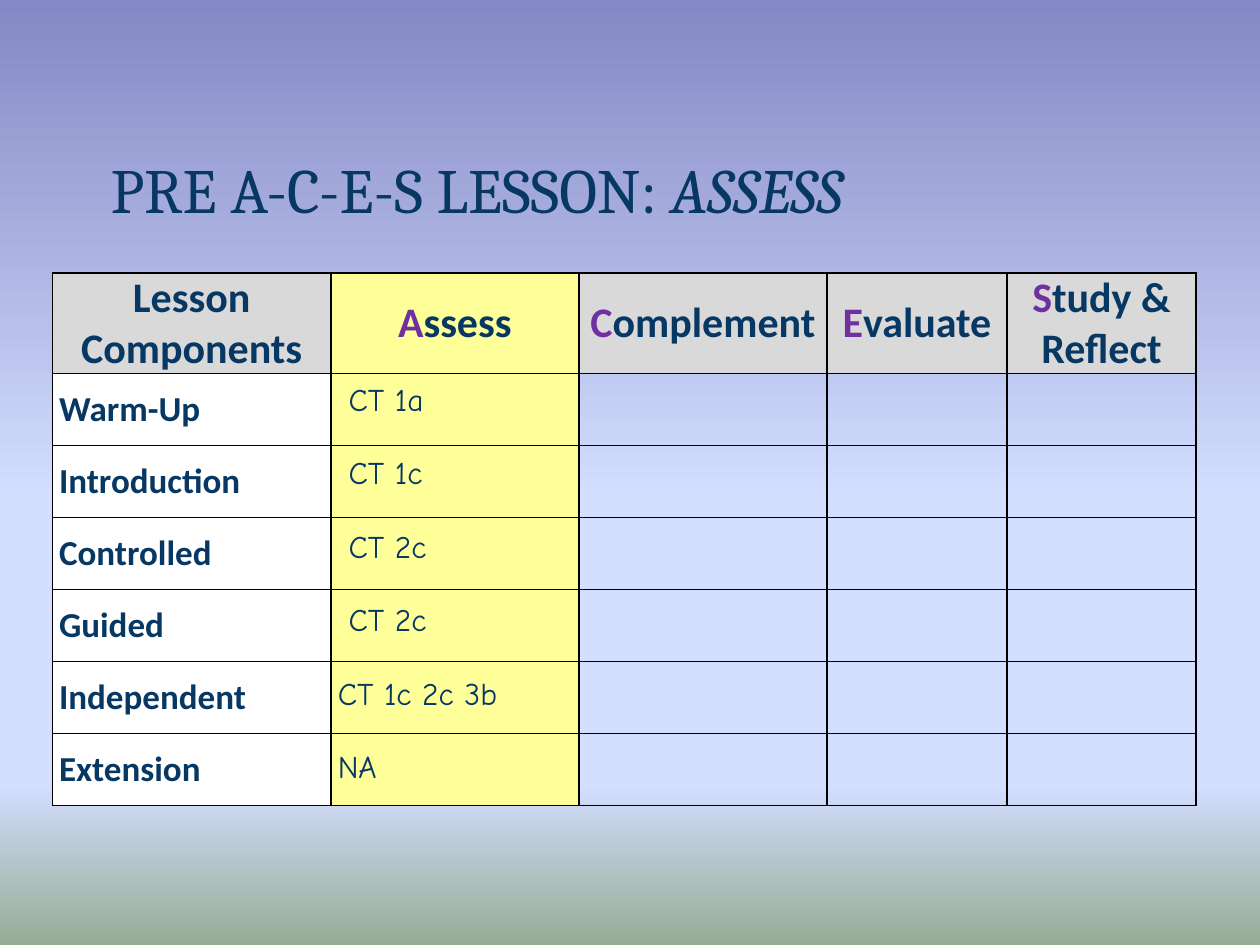
import pptx
import pptx.dml.color
import pptx.enum.text
import pptx.oxml
import pptx.oxml.ns
import pptx.util
from pptx.util import Cm

RGBColor = pptx.dml.color.RGBColor
NAVY = RGBColor(0x07, 0x37, 0x63)
PURPLE = RGBColor(0x70, 0x30, 0xA0)
GRAY = RGBColor(0xD9, 0xD9, 0xD9)
YELLOW = RGBColor(0xFF, 0xFF, 0x99)
WHITE = RGBColor(0xFF, 0xFF, 0xFF)
BLACK = RGBColor(0x00, 0x00, 0x00)
SKY_STOPS = [
    (0, RGBColor(0x84, 0x88, 0xC4)),
    (53, RGBColor(0xD4, 0xDE, 0xFF)),
    (83, RGBColor(0xD4, 0xDE, 0xFF)),
    (100, RGBColor(0x96, 0xAB, 0x94)),
]

MIDDLE = pptx.enum.text.MSO_ANCHOR.MIDDLE
CENTER = pptx.enum.text.PP_ALIGN.CENTER
NAMESPACE = pptx.oxml.ns.nsdecls("a")

COLUMN_WIDTHS = [5.61, 5, 5, 3.63, 3.81]
HEADER_HEIGHT, ROW_HEIGHT = 1.85, 1.45
# Each heading is split into its highlighted initial and the rest
HEADINGS = [("", "Lesson Components"), ("A", "ssess"), ("C", "omplement"),
            ("E", "valuate"), ("S", "tudy & Reflect")]
COMPONENTS = ["Warm-Up", "Introduction", "Controlled", "Guided", "Independent", "Extension"]
# Code and whether it is indented
ASSESS_CODES = [("CT 1a", True), ("CT 1c", True), ("CT 2c", True),
                ("CT 2c", True), ("CT 1c 2c 3b", False), ("NA", False)]


def add_run(paragraph, text, font, size, color=NAVY, bold=False, italic=False):
    run = paragraph.add_run()
    run.text = text
    run.font.name = font
    run.font.size = pptx.util.Pt(size)
    run.font.color.rgb = color
    run.font.bold = bold
    run.font.italic = italic


def paint_background(slide):
    fill = slide.background.fill
    fill.gradient()
    fill.gradient_angle = 270
    stop_list = fill.gradient_stops[0]._gs.getparent()
    for stop in list(stop_list):
        stop_list.remove(stop)
    for position, color in SKY_STOPS:
        stop_list.append(pptx.oxml.parse_xml(
            f'<a:gs {NAMESPACE} pos="{position * 1000}"><a:srgbClr val="{color}"/></a:gs>'))


def add_title(slide, left, top, width, height):
    frame = slide.shapes.add_textbox(Cm(left), Cm(top), Cm(width), Cm(height)).text_frame
    frame.word_wrap = True
    frame.vertical_anchor = pptx.enum.text.MSO_ANCHOR.BOTTOM
    frame.margin_left = frame.margin_right = Cm(0.33)
    frame.margin_top = frame.margin_bottom = Cm(0.18)
    paragraph = frame.paragraphs[0]
    paragraph.line_spacing = 0.8
    add_run(paragraph, "PRE A-C-E-S LESSON: ", "Cambria", 36)
    add_run(paragraph, "ASSESS", "Cambria", 36, italic=True)


def style_cell(cell, color=None):
    cell.vertical_anchor = MIDDLE
    cell.margin_left = cell.margin_right = Cm(0.13)
    cell.margin_top = cell.margin_bottom = 0
    properties = cell._tc.get_or_add_tcPr()
    for side in ("lnL", "lnR", "lnT", "lnB"):
        properties.append(pptx.oxml.parse_xml(
            f'<a:{side} {NAMESPACE} w="12700"><a:solidFill><a:srgbClr val="{BLACK}"/>'
            f'</a:solidFill></a:{side}>'))
    if color is None:
        cell.fill.background()
    else:
        cell.fill.solid()
        cell.fill.fore_color.rgb = color


def add_lesson_table(slide, left, top):
    height = HEADER_HEIGHT + ROW_HEIGHT * len(COMPONENTS)
    table = slide.shapes.add_table(
        len(COMPONENTS) + 1, len(HEADINGS), Cm(left), Cm(top),
        Cm(sum(COLUMN_WIDTHS)), Cm(height)).table
    table.first_row = table.horz_banding = False
    for column, width in zip(table.columns, COLUMN_WIDTHS):
        column.width = Cm(width)
    for index, row in enumerate(table.rows):
        row.height = Cm(ROW_HEIGHT if index else HEADER_HEIGHT)

    # Header row
    for column, (initial, rest) in enumerate(HEADINGS):
        cell = table.cell(0, column)
        style_cell(cell, YELLOW if column == 1 else GRAY)
        paragraph = cell.text_frame.paragraphs[0]
        paragraph.alignment = CENTER
        if initial:
            add_run(paragraph, initial, "Calibri", 24, PURPLE, bold=True)
        add_run(paragraph, rest, "Calibri", 24, bold=True)

    # Lesson components
    for row, component in enumerate(COMPONENTS, start=1):
        for column, color in enumerate([WHITE, YELLOW, None, None, None]):
            style_cell(table.cell(row, column), color)
        paragraph = table.cell(row, 0).text_frame.paragraphs[0]
        add_run(paragraph, component, "Calibri", 20, bold=True)


def add_assess_codes(slide, left, top, pitch):
    for index, (code, indented) in enumerate(ASSESS_CODES):
        offset, width = (0.22, 4.45) if indented else (0, 5.08)
        frame = slide.shapes.add_textbox(
            Cm(left + offset), Cm(top + index * pitch), Cm(width), Cm(0.96)).text_frame
        frame.word_wrap = True
        frame.auto_size = pptx.enum.text.MSO_AUTO_SIZE.SHAPE_TO_FIT_TEXT
        paragraph = frame.paragraphs[0]
        paragraph.line_spacing = 0.9
        add_run(paragraph, code, "Comic Neue", 18)


def main():
    presentation = pptx.Presentation()
    presentation.slide_width = Cm(25.4)
    presentation.slide_height = Cm(19.05)
    slide = presentation.slides.add_slide(presentation.slide_layouts[6])
    paint_background(slide)
    add_title(slide, 1.9, 1.35, 21.6, 3.38)
    add_lesson_table(slide, 1.06, 5.5)
    add_assess_codes(slide, 6.56, 7.62, 1.48)
    presentation.save("out.pptx")


if __name__ == "__main__":
    main()
